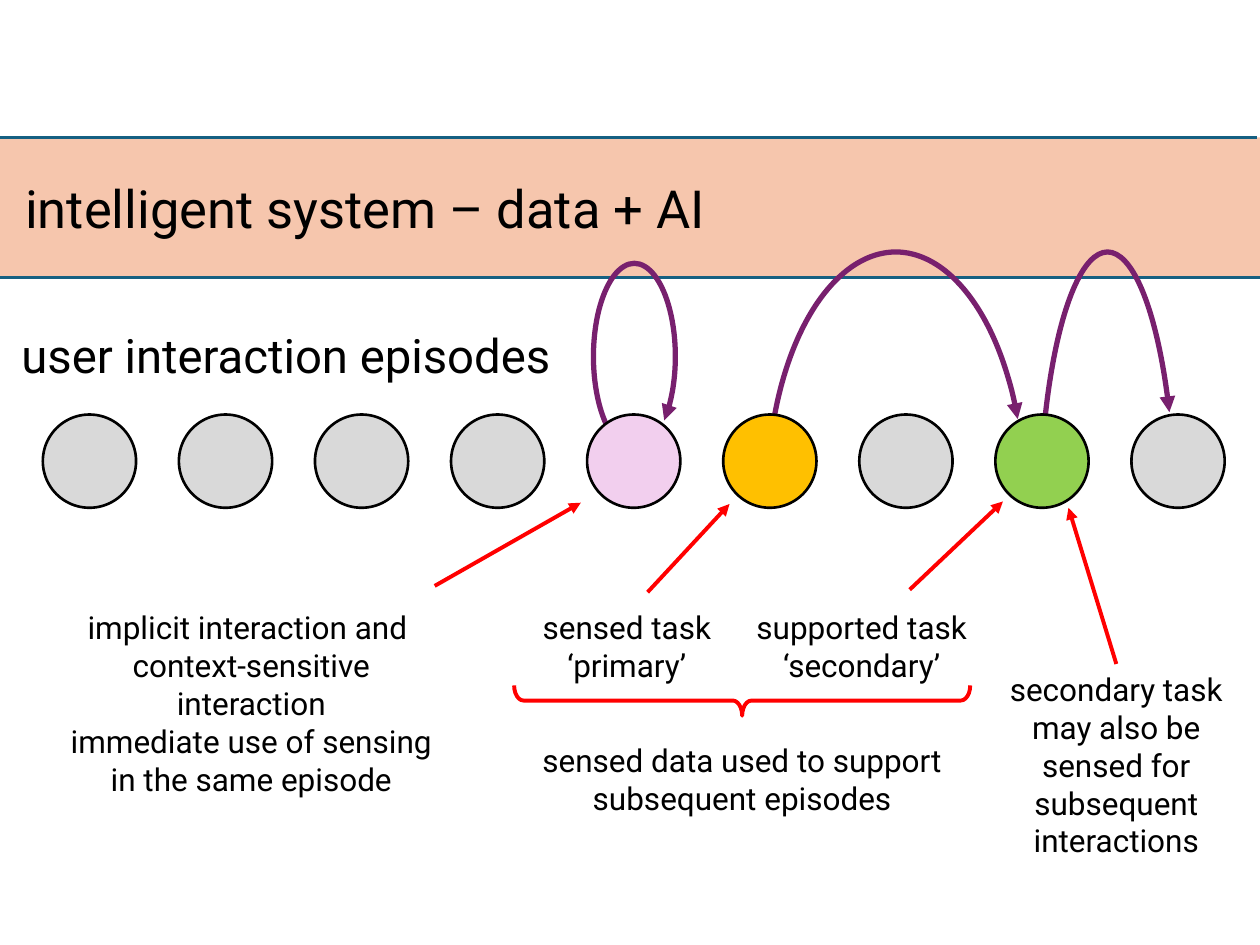
from dataclasses import dataclass

from lxml.etree import SubElement
from pptx import Presentation
from pptx.dml.color import RGBColor
from pptx.enum.shapes import MSO_CONNECTOR, MSO_SHAPE
from pptx.enum.text import MSO_ANCHOR, MSO_AUTO_SIZE, PP_ALIGN
from pptx.oxml.ns import qn
from pptx.util import Inches, Pt


@dataclass(frozen=True)
class Theme:
    font: str = "Roboto"
    ink: str = "000000"
    band: str = "F6C6AD"
    border: str = "156082"
    flow: str = "78206E"
    callout: str = "FF0000"
    idle: str = "D9D9D9"
    implicit: str = "F2CFEE"
    primary: str = "FFC000"
    secondary: str = "92D050"
    title_size: int = 30
    heading_size: int = 27
    label_size: int = 18
    thin: float = 1.5
    medium: float = 2.25
    thick: float = 3


THEME = Theme()
WIDTH, HEIGHT = 10, 7.5

TITLE = "intelligent system – data + AI"
BAND = (0, 1.09, WIDTH, 1.12)
HEADING = "user interaction episodes"
HEADING_BOX = (-0.02, 2.54, 5.07, 0.56)
BORDERS = [((-0.02, 1.09), (9.98, 1.09)), ((0, 2.2), (WIDTH, 2.2))]

EPISODES = [THEME.idle] * 4 + [
    THEME.implicit, THEME.primary, THEME.idle, THEME.secondary, THEME.idle]
EPISODE_LEFT, EPISODE_TOP, EPISODE_SIZE, EPISODE_PITCH = 0.34, 3.29, 0.74, 1.08

# Box, then start and end angle in degrees
FLOWS = [
    ((4.71, 2.09, 0.65, 1.48), 108.77, 64.89),
    ((6.09, 2, 2.04, 3.88), 206.76, 327.6),
    ((8.25, 2, 1.08, 4.36), 234.2, 298.38),
]

CALLOUTS = [
    ((3.45, 4.65), (4.61, 3.99)),
    ((5.14, 4.7), (5.79, 4)),
    ((7.22, 4.68), (7.96, 3.98)),
    ((8.86, 5.27), (8.48, 4.03)),
]

# Box, then paragraphs, each a list of lines
LABELS = [
    ((0.36, 4.78, 3.27, 1.31), [["implicit interaction and ",
                                 "context-sensitive interaction",
                                 "immediate use of sensing in the same episode"]]),
    ((3.73, 4.78, 2.49, 0.71), [["sensed task"], ["‘primary’"]]),
    ((5.36, 4.78, 2.96, 0.71), [["supported task"], ["‘secondary’"]]),
    ((3.87, 5.83, 4.04, 0.71), [["sensed data used to support subsequent episodes"]]),
    ((7.71, 5.27, 2.3, 1.62), [["secondary task"],
                               ["may also be sensed for subsequent interactions"]]),
]
BRACE = (5.77, 3.75, 0.24, 3.62)


def color(value):
    return RGBColor.from_string(value)


def inches(values):
    return [Inches(value) for value in values]


def style_line(line, value, width, arrow=False):
    line.color.rgb = color(value)
    line.width = Pt(width)
    if arrow:
        properties = line._get_or_add_ln()
        SubElement(properties, qn("a:tailEnd"), type="triangle")


def add_line(slide, start, end, value, width, arrow=False):
    line = slide.shapes.add_connector(
        MSO_CONNECTOR.STRAIGHT, *inches(start + end))
    style_line(line.line, value, width, arrow)
    SubElement(line._element.spPr, qn("a:effectLst"))


def add_shape(slide, kind, box, value, width, fill=None, arrow=False):
    shape = slide.shapes.add_shape(kind, *inches(box))
    shape.shadow.inherit = False
    if fill:
        shape.fill.solid()
        shape.fill.fore_color.rgb = color(fill)
    else:
        shape.fill.background()
    style_line(shape.line, value, width, arrow)
    return shape


def write(shape, paragraphs, size, align, anchor=MSO_ANCHOR.TOP, inset=0.1):
    frame = shape.text_frame
    frame.word_wrap = True
    frame.auto_size = MSO_AUTO_SIZE.NONE
    frame.vertical_anchor = anchor
    frame.margin_left = Inches(inset)
    for index, lines in enumerate(paragraphs):
        para = frame.add_paragraph() if index else frame.paragraphs[0]
        para.alignment = align
        for row, line in enumerate(lines):
            if row:
                para.add_line_break()
            span = para.add_run()
            span.text = line
            span.font.name = THEME.font
            span.font.size = Pt(size)
            span.font.color.rgb = color(THEME.ink)


def add_band(slide):
    band = slide.shapes.title
    band.left, band.top, band.width, band.height = inches(BAND)
    band.fill.solid()
    band.fill.fore_color.rgb = color(THEME.band)
    write(band, [[TITLE]], THEME.title_size, PP_ALIGN.LEFT,
          MSO_ANCHOR.MIDDLE, inset=0.2)


def add_flows(slide):
    for box, *angles in FLOWS:
        arc = add_shape(slide, MSO_SHAPE.ARC, box, THEME.flow, THEME.thick, arrow=True)
        for index, angle in enumerate(angles):
            # Angles are stored in 60000ths of a degree, adjustments in 100000ths
            arc.adjustments[index] = angle * 0.6


def add_episodes(slide):
    for index, fill in enumerate(EPISODES):
        left = EPISODE_LEFT + index * EPISODE_PITCH
        add_shape(slide, MSO_SHAPE.OVAL,
                  (left, EPISODE_TOP, EPISODE_SIZE, EPISODE_SIZE),
                  THEME.ink, THEME.thin, fill)


def add_labels(slide):
    heading = slide.shapes.add_textbox(*inches(HEADING_BOX))
    write(heading, [[HEADING]], THEME.heading_size, PP_ALIGN.LEFT, inset=0.19)
    for box, paragraphs in LABELS:
        label = slide.shapes.add_textbox(*inches(box))
        write(label, paragraphs, THEME.label_size, PP_ALIGN.CENTER)


def main():
    deck = Presentation()
    deck.slide_width, deck.slide_height = inches((WIDTH, HEIGHT))
    page = deck.slides.add_slide(deck.slide_layouts.get_by_name("Title Only"))
    add_band(page)
    for start, end in BORDERS:
        add_line(page, start, end, THEME.border, THEME.thin)
    add_flows(page)
    add_episodes(page)
    for start, end in CALLOUTS:
        add_line(page, start, end, THEME.callout, THEME.medium, arrow=True)
    add_labels(page)
    brace = add_shape(page, MSO_SHAPE.RIGHT_BRACE, BRACE, THEME.callout, THEME.medium)
    brace.rotation = 90
    brace.adjustments[0] = 0.31
    deck.save("out.pptx")


if __name__ == "__main__":
    main()
